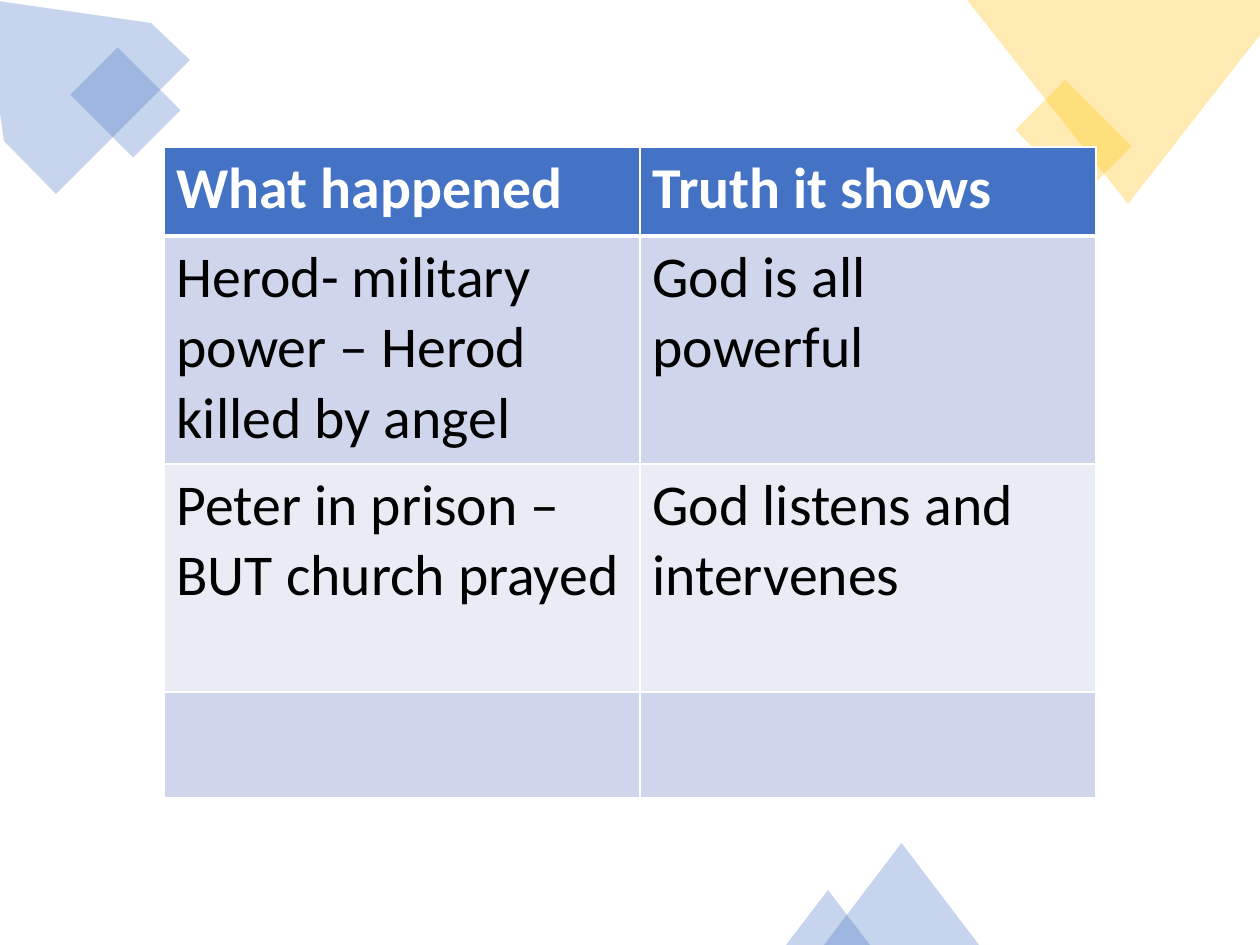
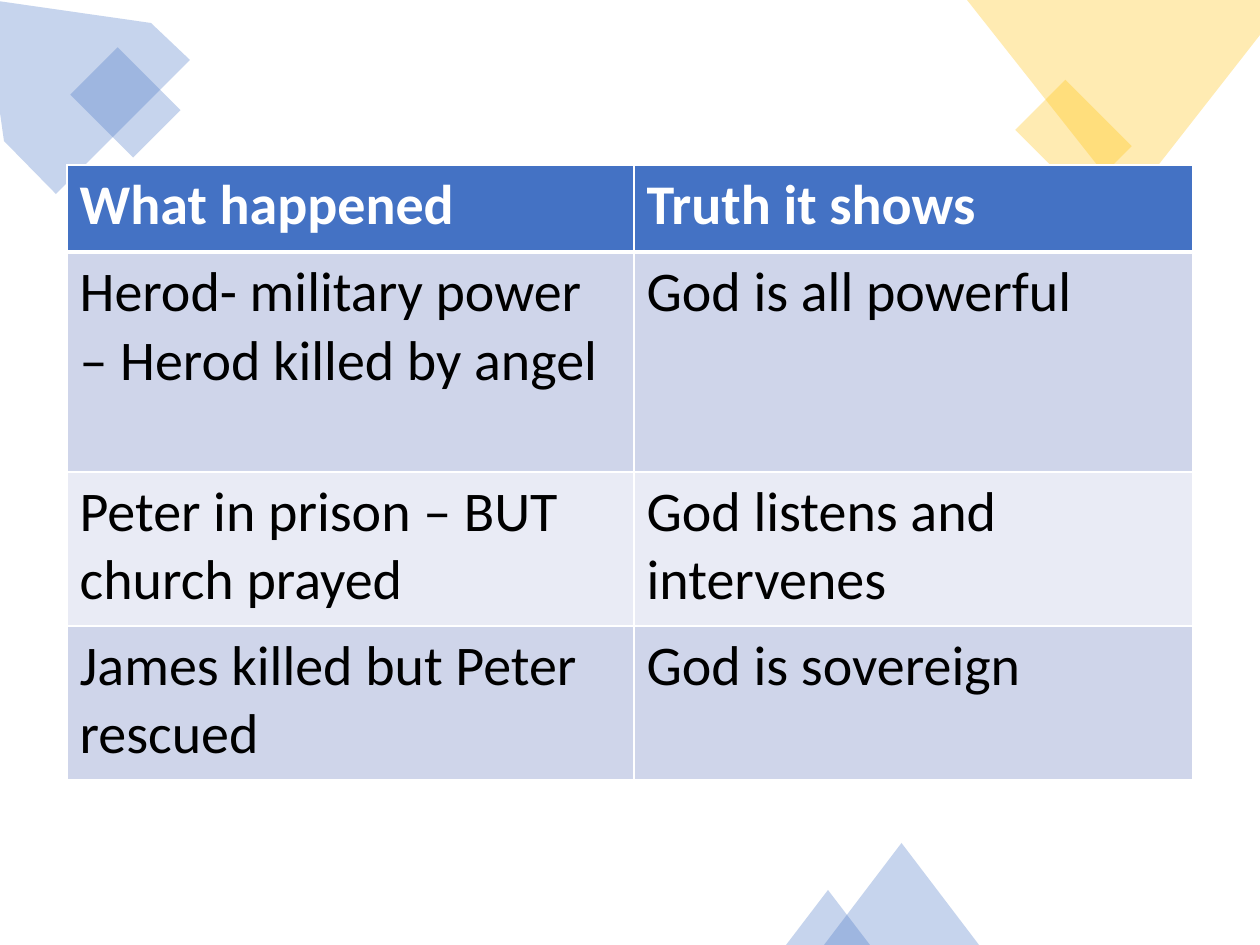
from dataclasses import dataclass

from lxml import etree
from pptx import Presentation
from pptx.dml.color import RGBColor
from pptx.enum.shapes import MSO_SHAPE
from pptx.oxml.ns import qn
from pptx.util import Emu, Pt

RECTANGLE = MSO_SHAPE.RECTANGLE
TRIANGLE = MSO_SHAPE.ISOSCELES_TRIANGLE

PX = 914400 / 126
PAGE_WIDTH, PAGE_HEIGHT = 1260, 945
BLANK_LAYOUT = 6


@dataclass(frozen=True)
class Theme:
    font: str = "Calibri"
    blue: str = "4472C4"
    gold: str = "FFC000"
    white: str = "FFFFFF"
    black: str = "000000"
    bands: tuple = ("CFD5EA", "E9EBF5")
    decor_opacity: int = 30
    large_size: int = 33
    normal_size: int = 32
    thin_border: int = 1
    header_border: int = 3


def px(length):
    return Emu(round(length * PX))


class Page:
    """Draws on one new slide in the style of the theme."""

    def __init__(self, deck, theme):
        self.theme = theme
        self.slide = deck.slides.add_slide(deck.slide_layouts[BLANK_LAYOUT])

    def tint(self, shape, color):
        """Give a shape a translucent fill without line or shadow."""
        shape.shadow.inherit = False
        shape.line.fill.background()
        shape.fill.solid()
        shape.fill.fore_color.rgb = RGBColor.from_string(color)
        color_node = shape.element.spPr.find(".//" + qn("a:srgbClr"))
        alpha = etree.SubElement(color_node, qn("a:alpha"))
        alpha.set("val", str(self.theme.decor_opacity * 1000))

    def shape(self, kind, left, top, width, height, color, rotation=0):
        shape = self.slide.shapes.add_shape(
            kind, px(left), px(top), px(width), px(height))
        shape.rotation = rotation
        self.tint(shape, color)

    def polygon(self, points, color):
        builder = self.slide.shapes.build_freeform(*points[0], scale=PX)
        builder.add_line_segments(points[1:], close=True)
        self.tint(builder.convert_to_shape(), color)

    def decorate(self):
        blue, gold = self.theme.blue, self.theme.gold
        self.polygon([(151, 23), (-16, -1), (4, 141), (56, 194), (190, 60)], blue)
        self.shape(RECTANGLE, 92, 58, 67, 89, blue, rotation=315)
        self.shape(RECTANGLE, 1038, 91, 71, 94, gold, rotation=315)
        self.polygon([(1260, 0), (967, 0), (1128, 204), (1260, 35)], gold)
        self.shape(TRIANGLE, 824, 843, 155, 102, blue)
        self.shape(TRIANGLE, 786, 890, 84, 55, blue)

    def borders(self, cell, row):
        """Draw white cell borders, with a heavier rule under the header."""
        thin, heavy = self.theme.thin_border, self.theme.header_border
        widths = {
            "a:lnL": thin,
            "a:lnR": thin,
            "a:lnT": heavy if row == 1 else thin,
            "a:lnB": heavy if row == 0 else thin,
        }
        properties = cell._tc.get_or_add_tcPr()
        for tag, width in widths.items():
            line = etree.SubElement(properties, qn(tag), w=str(Pt(width)))
            fill = etree.SubElement(line, qn("a:solidFill"))
            etree.SubElement(fill, qn("a:srgbClr"), val=self.theme.white)

    def cell(self, cell, row, text, size):
        theme = self.theme
        is_header = row == 0
        self.borders(cell, row)
        cell.fill.solid()
        fill = theme.blue if is_header else theme.bands[(row - 1) % 2]
        cell.fill.fore_color.rgb = RGBColor.from_string(fill)
        cell.text_frame.text = text
        for span in cell.text_frame.paragraphs[0].runs:
            span.font.name = theme.font
            span.font.size = Pt(size)
            span.font.bold = is_header
            span.font.color.rgb = RGBColor.from_string(
                theme.white if is_header else theme.black)

    def table(self, left, top, widths, heights, rows, size):
        table = self.slide.shapes.add_table(
            len(heights), len(widths), px(left), px(top),
            px(sum(widths)), px(sum(heights))).table
        for column, width in zip(table.columns, widths):
            column.width = px(width)
        for row, height in zip(table.rows, heights):
            row.height = px(height)
        for row, texts in enumerate(rows):
            for column, text in enumerate(texts):
                self.cell(table.cell(row, column), row, text, size)


def main():
    theme = Theme()
    deck = Presentation()
    deck.slide_width, deck.slide_height = px(PAGE_WIDTH), px(PAGE_HEIGHT)

    lessons = [
        ("What happened", "Truth it shows"),
        ("Herod- military power – Herod killed by angel", "God is all powerful"),
        ("Peter in prison – BUT church prayed", "God listens and intervenes"),
    ]
    last_lesson = ("James killed but Peter rescued", "God is sovereign")

    page = Page(deck, theme)
    page.decorate()
    page.table(164, 147, (476, 456), (89, 228, 228, 106),
               lessons + [("", "")], theme.large_size)

    page = Page(deck, theme)
    page.decorate()
    page.table(67, 165, (567, 559), (87, 220, 154, 154),
               lessons + [last_lesson], theme.normal_size)

    deck.save("out.pptx")


if __name__ == "__main__":
    main()
